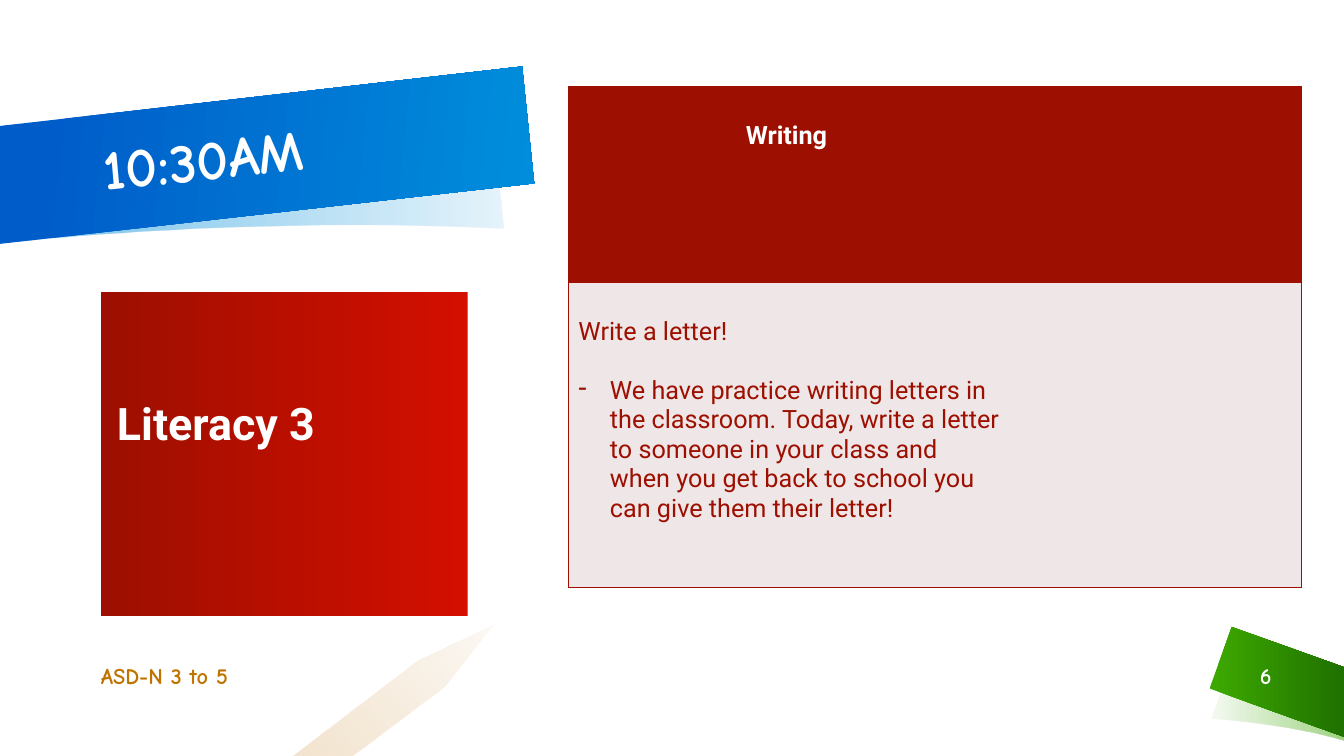
from lxml.etree import SubElement
from pptx import Presentation
from pptx.dml.color import RGBColor
from pptx.enum.text import MSO_ANCHOR, MSO_AUTO_SIZE, PP_ALIGN
from pptx.oxml.ns import qn
from pptx.util import Pt

WHITE = RGBColor(0xFF, 0xFF, 0xFF)
RED = RGBColor(0x9D, 0x0F, 0x00)
BRIGHT = RGBColor(0xD3, 0x0F, 0x00)
PINK = RGBColor(0xEF, 0xE7, 0xE7)
GREEN = RGBColor(0x3D, 0xA8, 0x00)
FOREST = RGBColor(0x1F, 0x71, 0x00)
BLUE = RGBColor(0x00, 0x5C, 0xC9)
SKY = RGBColor(0x00, 0x8E, 0xDC)
OCHRE = RGBColor(0xC0, 0x74, 0x00)
HAND = "Comic Neue"
SANS = "Roboto"
PLAIN = "{2D5ABB26-0587-4C30-8999-92F81FD0307C}"


def curve(start, one, two, end, steps=16):
    """Return points along a cubic curve."""
    points = []
    for step in range(steps + 1):
        t = step / steps
        u = 1 - t
        parts = (u ** 3, 3 * u * u * t, 3 * u * t * t, t ** 3)
        points.append(tuple(sum(k * p[axis] for k, p in zip(parts, (start, one, two, end)))
                            for axis in (0, 1)))
    return points


class Deck:
    """Hold the style and the current slide."""

    def __init__(self):
        """Open a wide slide with a title and a body."""
        self.show = Presentation()
        self.show.slide_width, self.show.slide_height = Pt(960), Pt(540)
        self.slide = self.show.slides.add_slide(self.show.slide_layouts[1])
        self.shapes = self.slide.shapes

    def shade(self, shape, angle, *stops):
        """Fill a shape with a gradient of place, colour and opacity."""
        shape.fill.gradient()
        shape.fill.gradient_angle = angle
        nodes = shape._element.spPr.iter(qn("a:gs"))
        for stop, node, (place, color, alpha) in zip(shape.fill.gradient_stops, nodes, stops):
            stop.position = place / 100
            stop.color.rgb = color
            if alpha < 100:
                SubElement(node[0], qn("a:alpha"), val=str(alpha * 1000))

    def ribbon(self, points, angle, *stops):
        """Draw a closed outline with a gradient."""
        spots = [(Pt(x), Pt(y)) for x, y in points]
        pen = self.shapes.build_freeform(*spots[0], scale=1.0)
        pen.add_line_segments(spots[1:], close=True)
        shape = pen.convert_to_shape()
        shape.shadow.inherit = False
        shape.line.fill.background()
        self.shade(shape, angle, *stops)

    def words(self, para, text, size, font, color, bold=True, align=PP_ALIGN.LEFT):
        """Add one styled run to a paragraph."""
        para.alignment = align
        run = para.add_run()
        run.text = text
        run.font.size, run.font.name, run.font.bold = Pt(size), font, bold
        run.font.color.rgb = color

    def frame(self, shape, pads=(7.2, 3.6, 7.2, 3.6)):
        """Set up the text frame of a shape and return its first paragraph."""
        box = shape.text_frame
        box.word_wrap = True
        box.auto_size = MSO_AUTO_SIZE.NONE
        box.vertical_anchor = MSO_ANCHOR.MIDDLE
        box.margin_left, box.margin_top, box.margin_right, box.margin_bottom = map(Pt, pads)
        return box.paragraphs[0]

    def holder(self, index, place, **pads):
        """Move a placeholder to the front and return it with its paragraph."""
        shape = self.slide.placeholders[index]
        shape.left, shape.top, shape.width, shape.height = map(Pt, place)
        shape._element.getparent().append(shape._element)
        para = self.frame(shape, **pads)
        para.line_spacing = 0.9
        para.space_before = Pt(0)
        return shape, para

    def title(self, text, place, turn):
        """Place the tilted title."""
        shape, para = self.holder(0, place)
        shape.rotation = turn
        self.words(para, text, 40, HAND, WHITE)

    def body(self, text, place, pads):
        """Place the red subject panel."""
        shape, para = self.holder(1, place, pads=pads)
        self.shade(shape, 180, (0, BRIGHT, 100), (100, RED, 100))
        self.bullet(para, 0)
        self.words(para, text, 32, SANS, WHITE)

    def bullet(self, para, indent, mark=None):
        """Set the hanging indent and the bullet mark."""
        props = para._p.get_or_add_pPr()
        props.set("marL", str(Pt(indent)))
        props.set("indent", str(-Pt(indent)))
        if mark:
            SubElement(props, qn("a:buChar"), char=mark)
        else:
            SubElement(props, qn("a:buNone"))

    def label(self, text, place, color, align, left):
        """Add a footer label."""
        box = self.shapes.add_textbox(*map(Pt, place))
        para = self.frame(box, (left, 3.6, 7.2, 3.6))
        self.words(para, text, 16, HAND, color, align=align)

    def edge(self, cell, sides):
        """Draw red lines on the given sides of a cell."""
        props = cell._tc.get_or_add_tcPr()
        for side in sides:
            line = SubElement(props, qn("a:ln" + side), w=str(Pt(1)))
            SubElement(SubElement(line, qn("a:solidFill")), qn("a:srgbClr"), val=str(RED))

    def table(self, place, cols, rows, fills):
        """Add a filled table with an outer border and return it."""
        grid = self.shapes.add_table(len(rows), len(cols), *map(Pt, place)).table
        grid._tbl.tblPr.find(qn("a:tableStyleId")).text = PLAIN
        grid.horz_banding = False
        for col, width in zip(grid.columns, cols):
            col.width = Pt(width)
        for row, height, fill in zip(grid.rows, rows, fills):
            row.height = Pt(height)
            for cell, sides in zip(row.cells, ("LTB", "RTB")):
                self.edge(cell, sides)
                cell.fill.solid()
                cell.fill.fore_color.rgb = fill
                cell.margin_top = Pt(24.7)
        return grid


def main():
    """Build the slide."""
    deck = Deck()
    low, high = (865.4, 513.4), (881.3, 469.4)
    deck.ribbon(curve(low, low, (920.2, 517), (960, 529.2))
                + curve((960, 481), (915.8, 468.7), high, high),
                0, (3, GREEN, 6), (100, GREEN, 50))
    deck.ribbon([(960, 476.6), (879.8, 447.8), (864, 491.8), (960, 526.3)],
                0, (3, GREEN, 100), (100, FOREST, 100))
    low, high = (359.3, 163.4), (350.6, 81.4)
    deck.ribbon(curve(high, high, (225.4, 67.7), (0, 90))
                + curve((0, 173.5), (205.9, 152.6), low, low),
                180, (0, SKY, 10), (88, SKY, 50))
    deck.ribbon([(0, 174.2), (381.6, 131), (373, 47.5), (0, 90)],
                354, (9, BLUE, 100), (100, SKY, 100))
    deck.ribbon([(352.8, 446.4), (298.8, 471.6), (208.8, 540), (252, 540), (317.5, 491)],
                221, (0, OCHRE, 5), (100, OCHRE, 20))
    deck.title("10:30AM", (66.2, 66.2, 311.8, 83.5), 354)
    deck.body("Literacy 3", (72, 208.8, 262, 231.1), (11.5, 14.4, 8.6, 54))
    deck.label("ASD-N 3 to 5", (72, 468, 208, 28.8), OCHRE, PP_ALIGN.LEFT, 0)
    deck.label("6", (879, 468, 50.4, 28.8), WHITE, PP_ALIGN.CENTER, 7.2)
    grid = deck.table((406, 61.9, 523.4, 358), (316, 207.4), (139.7, 218.3), (RED, PINK))
    head = grid.cell(0, 0).text_frame.paragraphs[0]
    deck.words(head, "Writing ", 18, SANS, WHITE, align=PP_ALIGN.CENTER)
    task = grid.cell(1, 0).text_frame
    deck.words(task.paragraphs[0], "Write a letter!", 18, SANS, RED, False)
    item = task.add_paragraph()
    deck.bullet(item, 22.5, "-")
    item.space_before = Pt(21.1)
    deck.words(item, "We have practice writing letters in the classroom. Today, write a letter "
               "to someone in your class and when you get back to school you can give them "
               "their letter!", 18, SANS, RED, False)
    deck.show.save("out.pptx")


if __name__ == "__main__":
    main()
